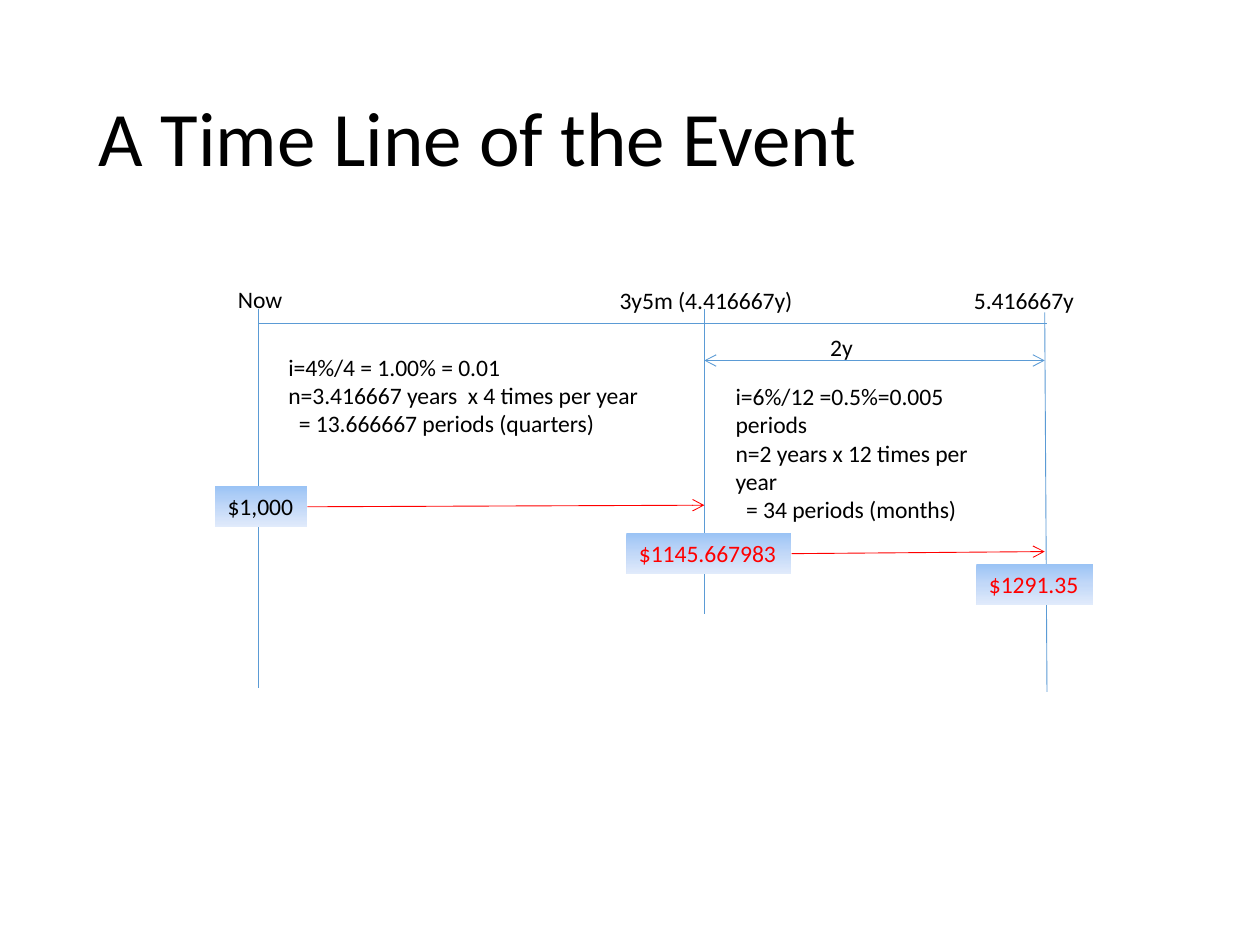
import copy

import pptx
import pptx.dml.color
import pptx.enum.dml
import pptx.enum.shapes
import pptx.enum.text
import pptx.oxml
import pptx.oxml.ns
import pptx.util

COLORS = {
    "text": "000000",
    "result": "FF0000",
    "timeline": "5B9BD5",
    "top": "9AC3F5",
    "middle": "C2D8F8",
    "bottom": "E1EBFB",
}
FONT = "Calibri"
BODY_SIZE = 13.5
LABEL_HEIGHT = 23.6
NOW, CHANGE, END = 147.6, 402.5, 597

TITLE = ("A Time Line of the Event", (49.5, 28.75, 621, 104.4))
LABELS = [
    ("Now", 128.9, 159.3, 40.3),
    ("3y5m (4.416667y)", 347, 159.8, 115.2),
    ("5.416667y", 549.4, 159.8, 72.7),
    ("2y", 467.3, 186.6, 27.4),
]
TIMELINES = [
    (NOW, 185, 598.3, 185),
    (NOW, 176.5, NOW, 393.1),
    (END, 178.5, 598.3, 395.3),
    (CHANGE, 176.5, CHANGE, 350.6),
]
SPAN = (CHANGE, 206, END, 206)
AMOUNTS = [
    ("$1,000", "text", 123, 277.8, 52.6, (CHANGE, 288.7)),
    ("$1145.667983", "result", 358, 304.6, 94.3, (END, 315.2)),
    ("$1291.35", "result", 558, 322.2, 66.5, None),
]
CALCULATIONS = [
    ((157.7, 198, 244.8, 56.2), [
        ("i=4%/4 = 1.00% = 0.01", 0),
        ("n=3.416667 years  x 4 times per year", 0),
        ("= 13.666667 periods (quarters)", 6),
    ]),
    ((413.3, 214.7, 172, 89), [
        ("i=6%/12 =0.5%=0.005 periods", 0),
        ("n=2 years x 12 times per year", 0),
        ("= 34 periods (months)", 6),
    ]),
]


def points(values):
    return [pptx.util.Pt(value) for value in values]


def rgb(name):
    return pptx.dml.color.RGBColor.from_string(COLORS[name])


def write(shape, lines, size=BODY_SIZE, color="text", wrap=False):
    frame = shape.text_frame
    frame.word_wrap = wrap
    frame.vertical_anchor = pptx.enum.text.MSO_ANCHOR.TOP
    for index, (text, indent) in enumerate(lines):
        paragraph = frame.paragraphs[0] if index == 0 else frame.add_paragraph()
        paragraph.alignment = pptx.enum.text.PP_ALIGN.LEFT
        if indent:
            paragraph._p.get_or_add_pPr().set("marL", str(pptx.util.Pt(indent)))
        run = paragraph.add_run()
        run.text = text
        run.font.name = FONT
        run.font.size = pptx.util.Pt(size)
        run.font.color.rgb = rgb(color)
    return frame


def add_text(slide, box, lines, **options):
    return write(slide.shapes.add_textbox(*points(box)), lines, **options)


def add_line(slide, ends, color, arrows=()):
    line = slide.shapes.add_connector(
        pptx.enum.shapes.MSO_CONNECTOR.STRAIGHT, *points(ends))
    line.line.width = pptx.util.Pt(0.5)
    line.line.color.rgb = rgb(color)
    outline = line.line._get_or_add_ln()
    for arrow in arrows:
        pptx.oxml.ns.qn("a:" + arrow)
        end = outline.makeelement(pptx.oxml.ns.qn("a:" + arrow), {"type": "arrow"})
        outline.append(end)
    properties = line._element.spPr
    properties.append(properties.makeelement(pptx.oxml.ns.qn("a:effectLst"), {}))
    return line


def add_amount(slide, text, color, left, top, width):
    box = slide.shapes.add_shape(
        pptx.enum.shapes.MSO_SHAPE.RECTANGLE, *points((left, top, width, LABEL_HEIGHT)))
    box.shadow.inherit = False
    box.line.fill.background()
    box.fill.gradient()
    box.fill.gradient_angle = 270
    first = box._element.spPr.find(".//" + pptx.oxml.ns.qn("a:gs"))
    first.addnext(copy.deepcopy(first))
    stops = zip(box.fill.gradient_stops, ("top", "middle", "bottom"), (0, 0.5, 1))
    for stop, name, position in stops:
        stop.color.rgb = rgb(name)
        stop.position = position
    write(box, [(text, 0)], color=color)
    return box


def main():
    presentation = pptx.Presentation()
    presentation.slide_width = pptx.util.Pt(720)
    presentation.slide_height = pptx.util.Pt(540)
    slide = presentation.slides.add_slide(presentation.slide_layouts[6])

    title, box = TITLE
    frame = add_text(slide, box, [(title, 0)], size=44, wrap=True)
    frame.vertical_anchor = pptx.enum.text.MSO_ANCHOR.MIDDLE
    frame.paragraphs[0].line_spacing = 0.9

    for ends in TIMELINES:
        add_line(slide, ends, "timeline")
    for text, left, top, width in LABELS:
        add_text(slide, (left, top, width, LABEL_HEIGHT), [(text, 0)])
    add_line(slide, SPAN, "timeline", ("headEnd", "tailEnd"))

    for text, color, left, top, width, target in AMOUNTS:
        amount = add_amount(slide, text, color, left, top, width)
        if target:
            start = (left + width, top + LABEL_HEIGHT / 2)
            arrow = add_line(slide, start + target, "result", ("tailEnd",))
            arrow.begin_connect(amount, 3)

    for box, lines in CALCULATIONS:
        add_text(slide, box, lines, wrap=True)

    presentation.save("out.pptx")


if __name__ == "__main__":
    main()
